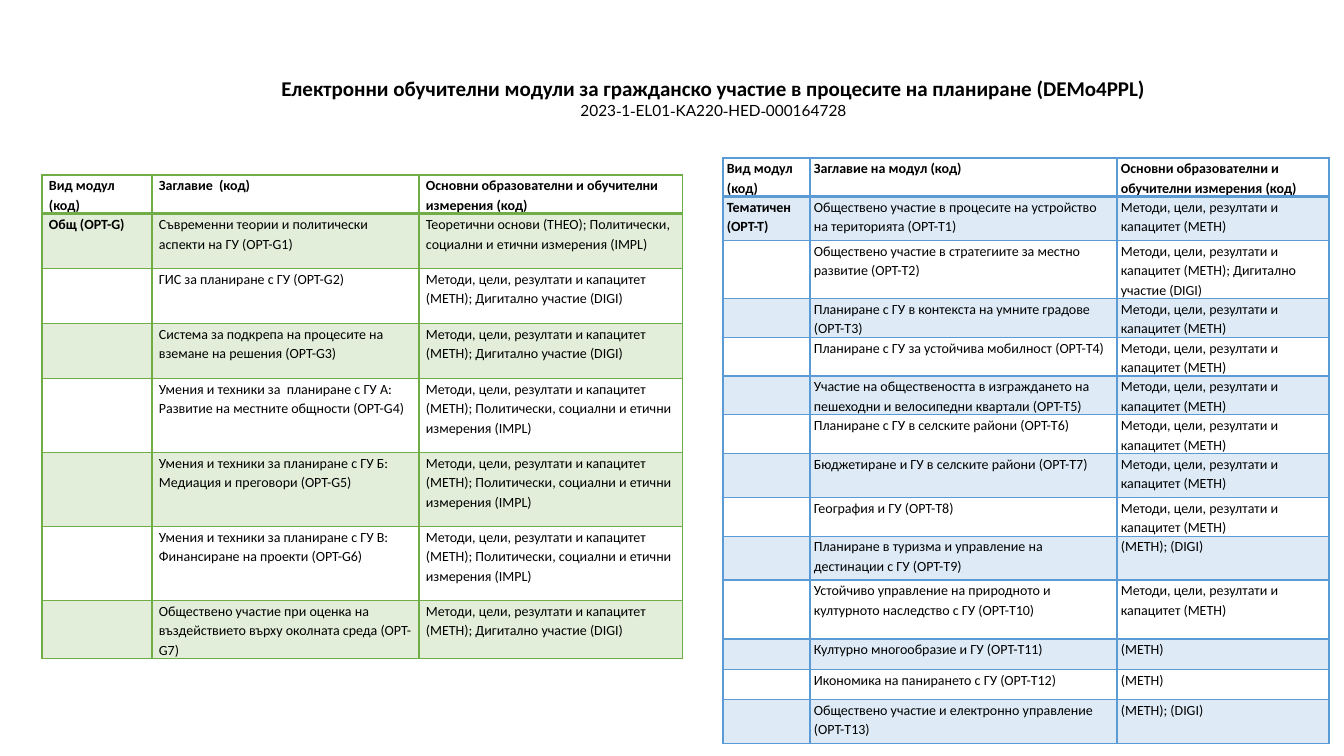
from lxml.etree import SubElement
from pptx import Presentation
from pptx.dml.color import RGBColor
from pptx.enum.text import MSO_ANCHOR, MSO_AUTO_SIZE, PP_ALIGN
from pptx.oxml.ns import qn
from pptx.util import Pt

EMU_PER_PX = 914400 / 100.8
TINT_PERCENT = 20

TITLE = "Електронни обучителни модули за гражданско участие в процесите на планиране (DEMo4PPL)"
PROJECT_NUMBER = "2023‐1‐EL01‐KA220‐HED‐000164728"
TITLE_BOX = (256, 70, 915, 55)

METHODS = "Методи, цели, резултати и капацитет (METH)"
DIGITAL = METHODS + "; Дигитално участие (DIGI)"
IMPACT = METHODS + "; Политически, социални и етични измерения (IMPL)"
SHORT_DIGITAL = "(METH); (DIGI)"

GENERAL_MODULES = {
    "color": "70AD47",
    "position": (42, 175),
    "side_margin": 7,
    "columns": (110, 267, 264),
    "header": ("Вид модул (код)", "Заглавие  (код)",
               "Основни образователни и обучителни измерения (код)"),
    "header_height": 34,
    "kind": "Общ (OPT-G)",
    "modules": [
        (55, "Съвременни теории и политически аспекти на ГУ (OPT-G1)",
         "Теоретични основи (THEO); Политически, социални и етични измерения (IMPL)"),
        (55, "ГИС за планиране с ГУ (OPT-G2)", DIGITAL),
        (55, "Система за подкрепа на процесите на вземане на решения (OPT-G3)", DIGITAL),
        (74, "Умения и техники за  планиране с ГУ А: Развитие на местните общности (OPT-G4)", IMPACT),
        (74, "Умения и техники за планиране с ГУ Б: Медиация и преговори (OPT-G5)", IMPACT),
        (74, "Умения и техники за планиране с ГУ B: Финансиране на проекти (OPT-G6)", IMPACT),
        (55, "Обществено участие при оценка на въздействието върху околната среда (OPT-G7)", DIGITAL),
    ],
}

THEMATIC_MODULES = {
    "color": "5B9BD5",
    "position": (723, 158),
    "side_margin": 4,
    "columns": (87, 307, 212),
    "header": ("Вид модул (код)", "Заглавие на модул (код)",
               "Основни образователни и обучителни измерения (код)"),
    "header_height": 31,
    "kind": "Тематичен\n(OPT-T)",
    "modules": [
        (44, "Обществено участие в процесите на устройство на територията (OPT-T1)", METHODS),
        (44, "Обществено участие в стратегиите за местно развитие (OPT-T2)", DIGITAL),
        (31, "Планиране с ГУ в контекста на умните градове (OPT-T3)", METHODS),
        (30, "Планиране с ГУ за устойчива мобилност (OPT-T4)", METHODS),
        (36, "Участие на обществеността в изграждането на пешеходни и велосипедни квартали (OPT-T5)",
         METHODS),
        (30, "Планиране с ГУ в селските райони (OPT-T6)", METHODS),
        (44, "Бюджетиране и ГУ в селските райони (OPT-T7)", METHODS),
        (30, "География и ГУ (OPT-T8)", METHODS),
        (44, "Планиране в туризма и управление на дестинации с ГУ (OPT-T9)", SHORT_DIGITAL),
        (59, "Устойчиво управление на природното и културното наследство с ГУ (OPT-T10)", METHODS),
        (30, "Културно многообразие и ГУ (OPT-T11)", "(METH)"),
        (30, "Икономика на панирането с ГУ (OPT-T12)", "(METH)"),
        (44, "Обществено участие и електронно управление (OPT-T13)", SHORT_DIGITAL),
    ],
}


def px(length):
    return round(length * EMU_PER_PX)


def rgb(color):
    return RGBColor.from_string(color)


def format_run(run, size, font="Calibri", bold=False):
    run.font.name = font
    run.font.size = Pt(size)
    run.font.bold = bold
    run.font.color.rgb = rgb("000000")


def add_title(slide):
    title = slide.shapes.title
    title.left, title.top, title.width, title.height = map(px, TITLE_BOX)
    frame = title.text_frame
    frame.word_wrap = True
    frame.auto_size = MSO_AUTO_SIZE.SHAPE_TO_FIT_TEXT
    frame.vertical_anchor = MSO_ANCHOR.TOP
    frame.text = TITLE
    heading = frame.paragraphs[0]
    heading.line_spacing = 1.0
    format_run(heading.runs[0], 15, bold=True)

    number = frame.add_paragraph()
    number.line_spacing = 1.07
    number.space_after = Pt(8)
    for index, part in enumerate(PROJECT_NUMBER.split("‐")):
        pieces = [("‐", "Times New Roman")] if index else []
        for text, font in pieces + [(part, "Lato")]:
            run = number.add_run()
            run.text = text
            format_run(run, 11, font)
    for paragraph in frame.paragraphs:
        paragraph.alignment = PP_ALIGN.CENTER


def add_borders(cell, color, widths):
    """Draw the sides of a cell; widths maps L, R, T, B to points, in that order."""
    properties = cell._tc.get_or_add_tcPr()
    for side, width in widths.items():
        line = SubElement(properties, qn(f"a:ln{side}"), w=str(Pt(width)))
        fill = SubElement(line, qn("a:solidFill"))
        SubElement(fill, qn("a:srgbClr"), val=color)


def fill_tint(cell, color):
    cell.fill.solid()
    cell.fill.fore_color.rgb = rgb(color)
    color_element = cell._tc.tcPr.find(qn("a:solidFill")).find(qn("a:srgbClr"))
    SubElement(color_element, qn("a:alpha"), val=str(TINT_PERCENT * 1000))


def format_cell(cell, text, bold, side_margin):
    cell.margin_left = cell.margin_right = px(side_margin)
    cell.margin_top = cell.margin_bottom = 0
    cell.text_frame.text = text
    for paragraph in cell.text_frame.paragraphs:
        if paragraph.runs:
            paragraph.line_spacing = 1.15
        for run in paragraph.runs:
            format_run(run, 10, bold=bold)


def add_module_table(slide, group):
    rows = [group["header"]]
    heights = [group["header_height"]]
    for index, (height, name, dimensions) in enumerate(group["modules"]):
        rows.append(("" if index else group["kind"], name, dimensions))
        heights.append(height)

    left, top = group["position"]
    columns = group["columns"]
    frame = slide.shapes.add_table(len(rows), len(columns), px(left), px(top),
                                   px(sum(columns)), px(sum(heights)))
    table = frame.table
    table.first_row = table.horz_banding = False
    for column, width in zip(table.columns, columns):
        column.width = px(width)
    for row_index, (texts, height) in enumerate(zip(rows, heights)):
        table.rows[row_index].height = px(height)
        widths = {"L": 1, "R": 1, "T": 2 if row_index == 1 else 1,
                  "B": 2 if row_index == 0 else 1}
        for column_index, text in enumerate(texts):
            cell = table.cell(row_index, column_index)
            bold = row_index == 0 or column_index == 0
            format_cell(cell, text, bold, group["side_margin"])
            add_borders(cell, group["color"], widths)
            if row_index % 2:
                fill_tint(cell, group["color"])
            else:
                cell.fill.background()


def main():
    presentation = Presentation()
    presentation.slide_width, presentation.slide_height = px(1344), px(756)
    slide = presentation.slides.add_slide(presentation.slide_layouts[5])
    add_title(slide)
    for group in (GENERAL_MODULES, THEMATIC_MODULES):
        add_module_table(slide, group)
    presentation.save("out.pptx")


if __name__ == "__main__":
    main()
